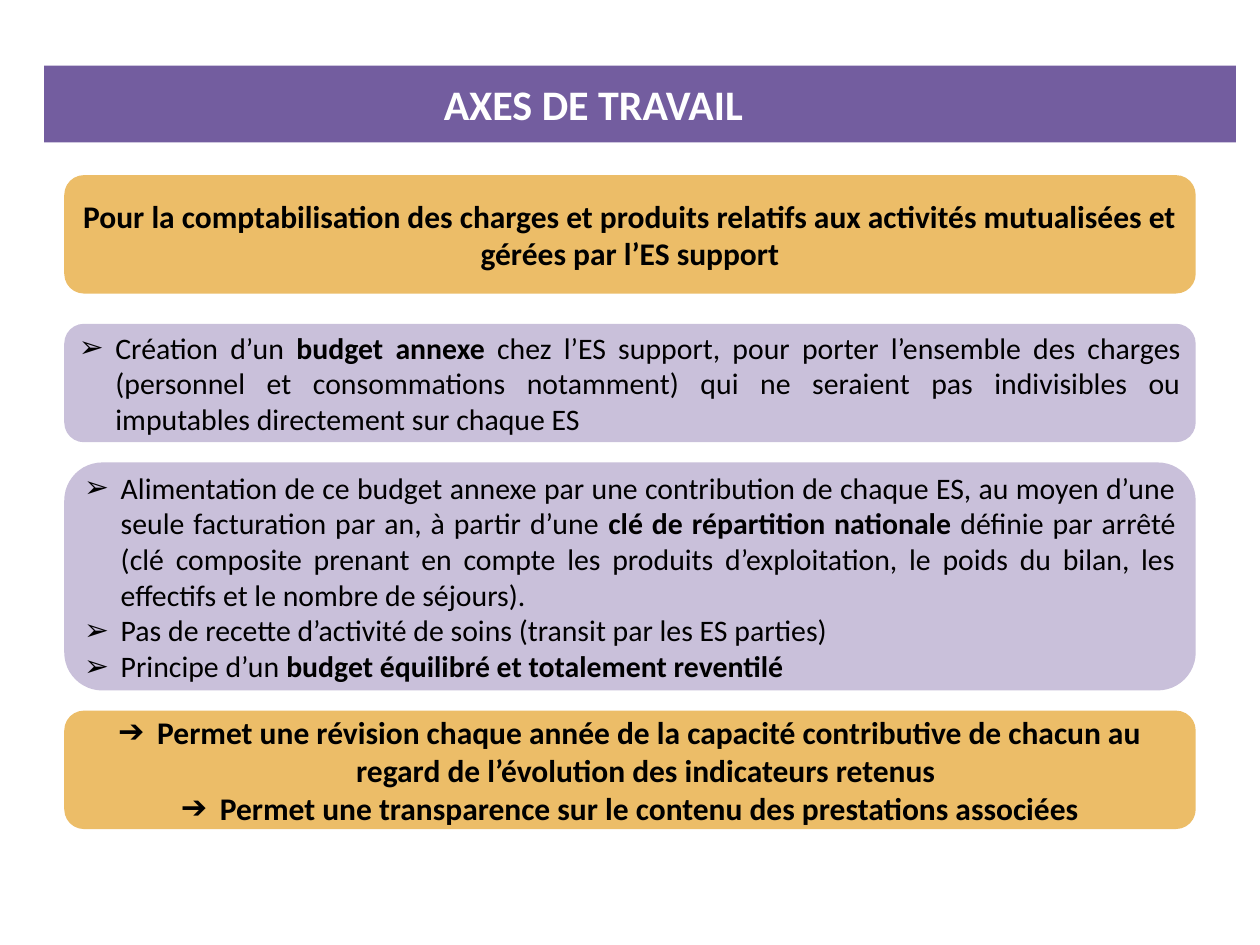
from lxml import etree
from pptx import Presentation, util as u
from pptx.dml.color import RGBColor
from pptx.enum import shapes, text
from pptx.oxml.ns import qn

WIDTH, HEIGHT = 10, 7.5
LEFT, PANEL_WIDTH = 0.51, 8.98
GOLD, LILAC, PURPLE = "ECBD68", "C9C0DA", "735D9F"
ALIGN = text.PP_ALIGN


def colour(value):
    """Turn a hex string into a colour."""
    return RGBColor.from_string(value)


def add_block(page, kind, box, fill):
    """Draw a plain filled block and return its text frame."""
    block = page.shapes.add_shape(kind, *(u.Inches(length) for length in box))
    block.shadow.inherit = False
    block.fill.solid()
    block.fill.fore_color.rgb = colour(fill)
    block.line.fill.background()
    frame = block.text_frame
    frame.word_wrap = True
    frame.vertical_anchor = text.MSO_ANCHOR.MIDDLE
    frame.margin_left = frame.margin_right = u.Inches(0.07)
    frame.margin_top = frame.margin_bottom = u.Inches(0.04)
    return frame


def add_bullet(para, symbol, indent):
    """Give a paragraph a hanging bullet."""
    props = para._p.get_or_add_pPr()
    props.set("marL", str(u.Inches(indent)))
    props.set("indent", str(-u.Inches(indent)))
    etree.SubElement(props, qn("a:buFont"), typeface="Arial")
    etree.SubElement(props, qn("a:buChar"), char=symbol)


def write(para, wording, size, align, bold=False, ink="000000"):
    """Write wording in which asterisks enclose the bold parts."""
    para.alignment = align
    for index, part in enumerate(wording.split("*")):
        if part:
            span = para.add_run()
            span.text = part
            span.font.name = "Calibri"
            span.font.size = u.Pt(size)
            span.font.bold = bold or index % 2 == 1
            span.font.color.rgb = colour(ink)


def add_title(page, box, wording):
    """Place the title bar."""
    frame = add_block(page, shapes.MSO_SHAPE.RECTANGLE, box, PURPLE)
    frame.margin_right = u.Inches(0.81)
    write(frame.paragraphs[0], wording, 24, ALIGN.CENTER, True, "FFFFFF")


def add_panel(page, box, fill, lines, size, align, bold=False, bullet=None, indent=0):
    """Place a rounded panel with one paragraph for each line."""
    frame = add_block(page, shapes.MSO_SHAPE.ROUNDED_RECTANGLE, box, fill)
    for index, line in enumerate(lines):
        para = frame.add_paragraph() if index else frame.paragraphs[0]
        if bullet:
            add_bullet(para, bullet, indent)
        write(para, line, size, align, bold)


def add_work_axes(page):
    """Place the title and the four panels."""
    key = {"fill": GOLD, "size": 18, "align": ALIGN.CENTER, "bold": True}
    detail = {"fill": LILAC, "size": 17, "align": ALIGN.JUSTIFY,
              "bullet": "➢", "indent": 0.29}
    panels = [
        (1.39, 0.94, key, [
            "Pour la comptabilisation des charges et produits relatifs aux activités "
            "mutualisées et gérées par l’ES support"]),
        (2.57, 0.94, detail, [
            "Création d’un *budget annexe* chez l’ES support, pour porter l’ensemble des "
            "charges (personnel et consommations notamment) qui ne seraient pas "
            "indivisibles ou imputables directement sur chaque ES"]),
        (3.67, 1.81, detail, [
            "Alimentation de ce budget annexe par une contribution de chaque ES, au moyen "
            "d’une seule facturation par an, à partir d’une *clé de répartition nationale "
            "*définie par arrêté (clé composite prenant en compte les produits "
            "d’exploitation, le poids du bilan, les effectifs et le nombre de séjours). ",
            "Pas de recette d’activité de soins (transit par les ES parties)",
            "Principe d’un *budget équilibré et totalement reventilé*"]),
        (5.64, 0.94, {**key, "bullet": "➔", "indent": 0.31}, [
            "Permet une révision chaque année de la capacité contributive de chacun au "
            "regard de l’évolution des indicateurs retenus ",
            "Permet une transparence sur le contenu des prestations associées"]),
    ]
    add_title(page, (0.35, 0.52, 9.46, 0.61), "AXES DE TRAVAIL")
    for top, height, style, lines in panels:
        add_panel(page, (LEFT, top, PANEL_WIDTH, height), lines=lines, **style)


def main():
    """Build and save the deck."""
    deck = Presentation()
    deck.slide_width, deck.slide_height = u.Inches(WIDTH), u.Inches(HEIGHT)
    add_work_axes(deck.slides.add_slide(deck.slide_layouts[6]))
    deck.save("out.pptx")


if __name__ == "__main__":
    main()
